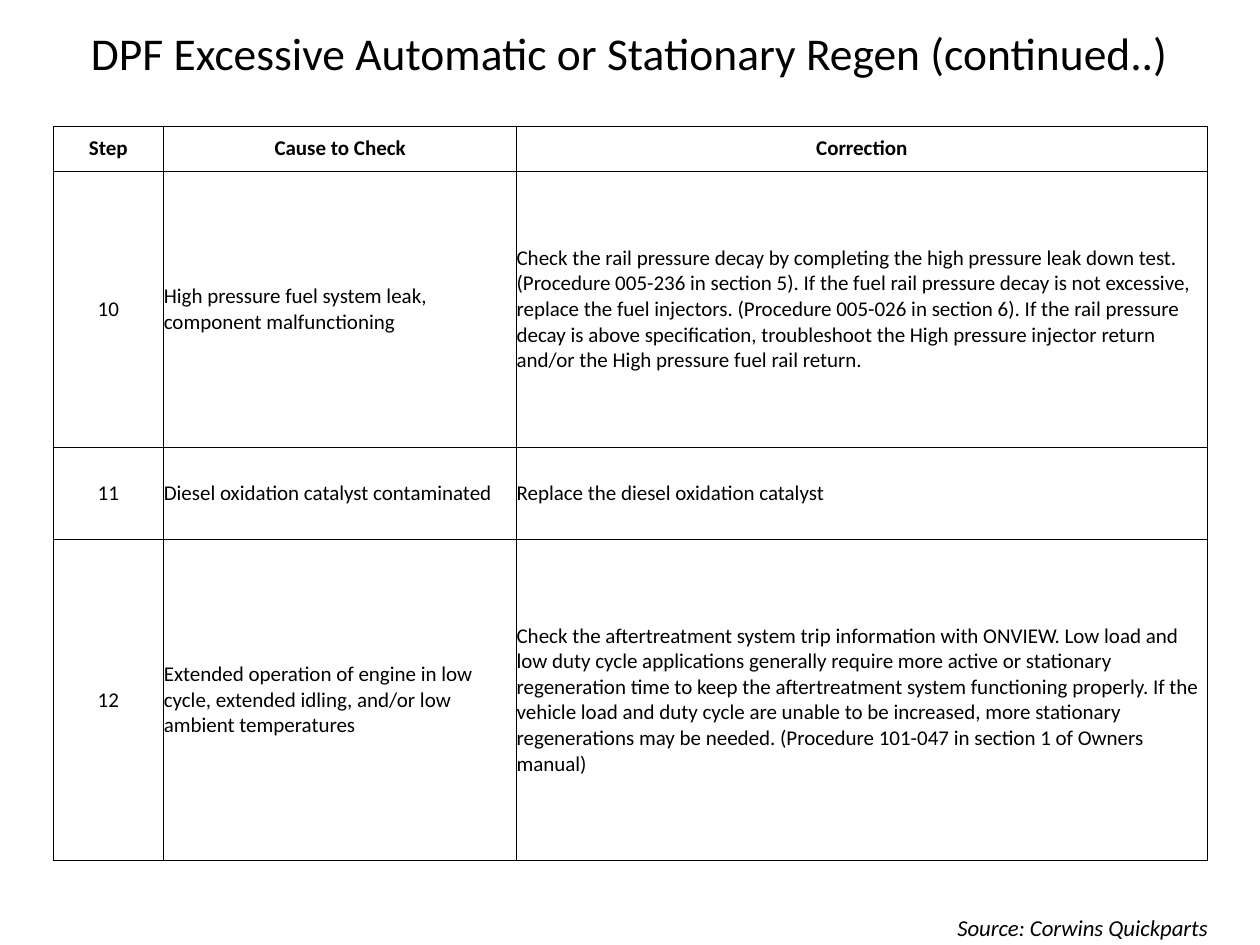
import pptx
import pptx.util
import pptx.dml.color
import pptx.enum.text
import pptx.oxml
import pptx.oxml.ns

Inches, Pt = pptx.util.Inches, pptx.util.Pt
ALIGN = pptx.enum.text.PP_ALIGN
MIDDLE = pptx.enum.text.MSO_ANCHOR.MIDDLE
TOP = pptx.enum.text.MSO_ANCHOR.TOP
BLACK = pptx.dml.color.RGBColor(0, 0, 0)

TITLE = "DPF Excessive Automatic or Stationary Regen (continued..)"
SOURCE = "Source: Corwins Quickparts"
HEADER = ("Step", "Cause to Check", "Correction")
STEPS = [
    ("10", "High pressure fuel system leak, component malfunctioning",
     "Check the rail pressure decay by completing the high pressure leak down test. "
     "(Procedure 005-236 in section 5). If the fuel rail pressure decay is not excessive, "
     "replace the fuel injectors. (Procedure 005-026 in section 6). If the rail pressure "
     "decay is above specification, troubleshoot the High pressure injector return "
     "and/or the High pressure fuel rail return."),
    ("11", "Diesel oxidation catalyst contaminated",
     "Replace the diesel oxidation catalyst"),
    ("12", "Extended operation of engine in low cycle, extended idling, "
     "and/or low ambient temperatures",
     "Check the aftertreatment system trip information with ONVIEW. Low load and low "
     "duty cycle applications generally require more active or stationary regeneration "
     "time to keep the aftertreatment system functioning properly. If the vehicle load "
     "and duty cycle are unable to be increased, more stationary regenerations may be "
     "needed. (Procedure 101-047 in section 1 of Owners manual)"),
]
COL_WIDTHS = (0.88, 2.8, 5.48)
ROW_HEIGHTS = (0.36, 2.19, 0.73, 2.55)


def write(tf, text, size, align, **font):
    p = tf.paragraphs[0]
    p.alignment = align
    r = p.add_run()
    r.text = text
    r.font.color.rgb = BLACK
    for name, value in dict(name="Calibri", size=Pt(size), **font).items():
        setattr(r.font, name, value)


def add_text(s, box, text, size, align, anchor, **font):
    tf = s.shapes.add_textbox(*map(Inches, box)).text_frame
    tf.word_wrap = True
    tf.vertical_anchor = anchor
    write(tf, text, size, align, **font)


def border(cell):
    tcPr = cell._tc.get_or_add_tcPr()
    for i, side in enumerate(("lnL", "lnR", "lnT", "lnB")):
        tcPr.insert(i, pptx.oxml.parse_xml(
            f'<a:{side} {pptx.oxml.ns.nsdecls("a")} w="{Pt(0.5)}"><a:solidFill>'
            f'<a:srgbClr val="{BLACK}"/></a:solidFill></a:{side}>'))


def add_steps(s):
    rows = [HEADER, *STEPS]
    box = (0.42, 1, sum(COL_WIDTHS), sum(ROW_HEIGHTS))
    table = s.shapes.add_table(len(rows), len(HEADER), *map(Inches, box)).table
    table.first_row = table.horz_banding = False
    for column, width in zip(table.columns, COL_WIDTHS):
        column.width = Inches(width)
    for row, height in zip(table.rows, ROW_HEIGHTS):
        row.height = Inches(height)
    for i, texts in enumerate(rows):
        for j, text in enumerate(texts):
            cell = table.cell(i, j)
            cell.fill.background()
            cell.vertical_anchor = MIDDLE
            for side in ("left", "right", "top", "bottom"):
                setattr(cell, f"margin_{side}", 0)
            centred = i == 0 or j == 0
            write(cell.text_frame, text, 12, ALIGN.CENTER if centred else ALIGN.LEFT, bold=i == 0)
            border(cell)


def main():
    prs = pptx.Presentation()
    prs.slide_width, prs.slide_height = Inches(10), Inches(7.5)
    s = prs.slides.add_slide(prs.slide_layouts[6])
    add_text(s, (0.5, 0, 9, 0.83), TITLE, 26, ALIGN.CENTER, MIDDLE)
    add_text(s, (7.5, 7.2, 2.5, 0.32), SOURCE, 13, ALIGN.LEFT, TOP, italic=True)
    add_steps(s)
    prs.save("out.pptx")


if __name__ == "__main__":
    main()
